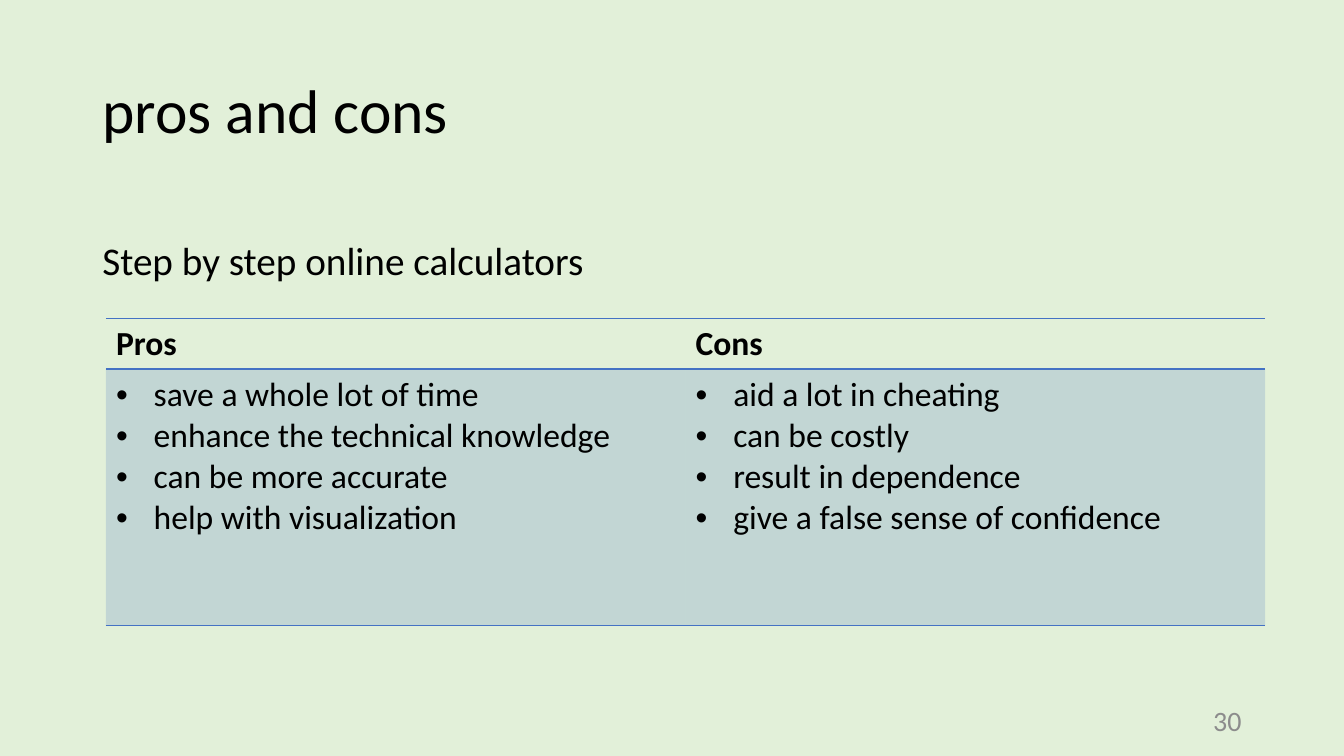
from lxml import etree
from pptx import Presentation
from pptx.dml.color import RGBColor
from pptx.enum.text import MSO_ANCHOR, PP_ALIGN
from pptx.oxml.ns import qn
from pptx.util import Cm, Pt

MIDDLE, TOP = MSO_ANCHOR.MIDDLE, MSO_ANCHOR.TOP
LEFT, RIGHT = PP_ALIGN.LEFT, PP_ALIGN.RIGHT

FONT = "Calibri"
BACKGROUND, INK, GREY, BLUE = "E2F0D9", "000000", "8C8C8C", "4472C4"
PLAIN_TABLE_STYLE = "{2D5ABB26-0587-4C30-8999-92F81FD0307C}"

# text, (left, top, width, height) in cm, size, colour, alignment, anchor, wrap
TEXTS = [
    ("pros and cons", (2.33, 1.01, 29.21, 3.68), 44, INK, LEFT, MIDDLE, True),
    ("30", (23.92, 17.65, 7.62, 1.01), 20, GREY, RIGHT, MIDDLE, True),
    ("Step by step online calculators", (2.33, 5.84, 12.78, 1.45), 28, INK, LEFT, TOP, False),
]
COLUMNS = {
    "Pros": ["save a whole lot of time", "enhance the technical knowledge",
             "can be more accurate", "help with visualization"],
    "Cons": ["aid a lot in cheating", "can be costly",
             "result in dependence", "give a false sense of confidence"],
}
TABLE_LEFT, TABLE_TOP, TABLE_WIDTH = 2.67, 8.02, 29.21
ROW_HEIGHTS = [1.28, 6.46]
TABLE_TEXT_SIZE = 24
BULLET_INDENT = Cm(0.95)


def paint(color_format, hex_color):
    color_format.rgb = RGBColor.from_string(hex_color)


def add_run(paragraph, text, size, color, bold=False):
    run = paragraph.add_run()
    run.text = text
    run.font.name, run.font.size, run.font.bold = FONT, Pt(size), bold
    paint(run.font.color, color)


def add_bullet(paragraph):
    properties = paragraph._p.get_or_add_pPr()
    properties.set("marL", str(BULLET_INDENT))
    properties.set("indent", str(-BULLET_INDENT))
    etree.SubElement(properties, qn("a:buFont"), typeface="Arial")
    etree.SubElement(properties, qn("a:buChar"), char="•")


def rule_cell(cell):
    """Draw thin lines along the top and bottom of a cell."""
    properties = cell._tc.get_or_add_tcPr()
    for position, side in enumerate(("a:lnT", "a:lnB")):
        line = etree.Element(qn(side), w=str(Pt(1)))
        fill = etree.SubElement(line, qn("a:solidFill"))
        etree.SubElement(fill, qn("a:srgbClr"), val=BLUE)
        properties.insert(position, line)


def tint_cell(cell, percent):
    cell.fill.solid()
    paint(cell.fill.fore_color, BLUE)
    color = cell._tc.tcPr.find(".//" + qn("a:srgbClr"))
    etree.SubElement(color, qn("a:alpha"), val=str(percent * 1000))


def add_text(slide, text, box, size, color, align, anchor, wrap):
    frame = slide.shapes.add_textbox(*map(Cm, box)).text_frame
    frame.word_wrap, frame.vertical_anchor = wrap, anchor
    paragraph = frame.paragraphs[0]
    paragraph.alignment = align
    if size == 44:
        paragraph.line_spacing = 0.9
    add_run(paragraph, text, size, color)


def add_comparison(slide):
    frame = slide.shapes.add_table(
        len(ROW_HEIGHTS), len(COLUMNS), Cm(TABLE_LEFT), Cm(TABLE_TOP),
        Cm(TABLE_WIDTH), Cm(sum(ROW_HEIGHTS)))
    table = frame.table
    table.horz_banding = False
    table._tbl.tblPr.find(qn("a:tableStyleId")).text = PLAIN_TABLE_STYLE
    for row, height in zip(table.rows, ROW_HEIGHTS):
        row.height = Cm(height)
    for column, (heading, points) in enumerate(COLUMNS.items()):
        table.columns[column].width = Cm(TABLE_WIDTH / len(COLUMNS))
        header, body = table.cell(0, column), table.cell(1, column)
        header.fill.background()
        add_run(header.text_frame.paragraphs[0], heading, TABLE_TEXT_SIZE, INK, bold=True)
        tint_cell(body, 20)
        for index, point in enumerate(points):
            frame = body.text_frame
            paragraph = frame.add_paragraph() if index else frame.paragraphs[0]
            add_bullet(paragraph)
            add_run(paragraph, point, TABLE_TEXT_SIZE, INK)
        rule_cell(header)
        rule_cell(body)


def main():
    deck = Presentation()
    deck.slide_width, deck.slide_height = Cm(33.87), Cm(19.05)
    slide = deck.slides.add_slide(deck.slide_layouts[6])
    slide.background.fill.solid()
    paint(slide.background.fill.fore_color, BACKGROUND)
    for text in TEXTS:
        add_text(slide, *text)
    add_comparison(slide)
    deck.save("out.pptx")


if __name__ == "__main__":
    main()
